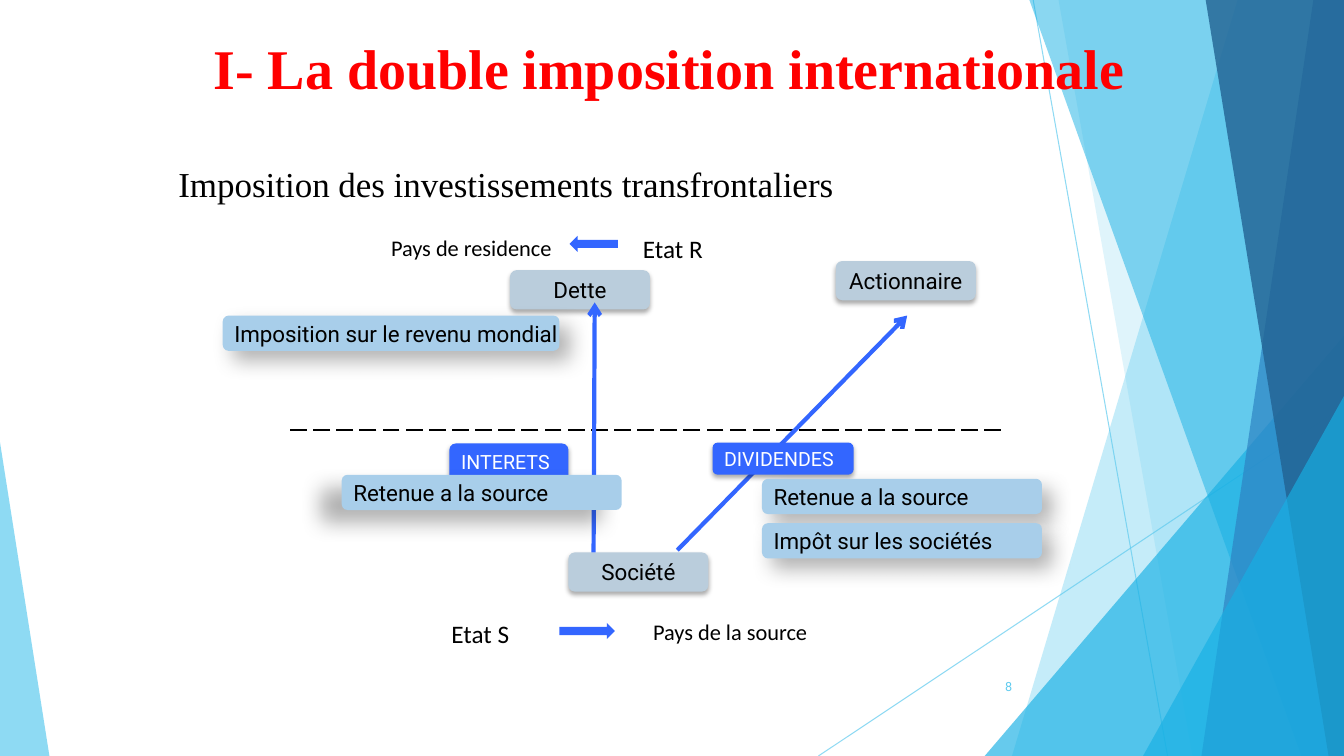
from dataclasses import dataclass
from typing import Any, Optional

from lxml import etree
from pptx import Presentation
from pptx.dml.color import RGBColor
from pptx.enum.dml import MSO_LINE
from pptx.enum.shapes import MSO_CONNECTOR, MSO_SHAPE
from pptx.enum.text import MSO_ANCHOR, MSO_AUTO_SIZE, PP_ALIGN
from pptx.oxml.ns import qn
from pptx.util import Pt

LEFT, MID, RIGHT, JUST = PP_ALIGN.LEFT, PP_ALIGN.CENTER, PP_ALIGN.RIGHT, PP_ALIGN.JUSTIFY
TOP, CORE = MSO_ANCHOR.TOP, MSO_ANCHOR.MIDDLE
ROUND, WEDGE = MSO_SHAPE.ROUNDED_RECTANGLE, MSO_SHAPE.RIGHT_TRIANGLE
PEAK = MSO_SHAPE.ISOSCELES_TRIANGLE
LARROW, RARROW = MSO_SHAPE.LEFT_ARROW, MSO_SHAPE.RIGHT_ARROW
STRAIGHT, DASH, FIXED = MSO_CONNECTOR.STRAIGHT, MSO_LINE.LONG_DASH, MSO_AUTO_SIZE.NONE
WIDE, HIGH = 960, 540


@dataclass(frozen=True)
class Theme:
    red: str = "FF0000"
    black: str = "000000"
    white: str = "FFFFFF"
    blue: str = "3366FF"
    grey: str = "BACDDC"
    pale: str = "A8CEEA"
    sky: str = "5FCBEF"
    cyan: str = "17B0E4"
    steel: str = "2E83C3"
    navy: str = "226292"
    serif: str = "Times New Roman"
    sans: str = "Roboto"
    plain: str = "Calibri"
    head: float = 40
    lead: float = 25
    state: float = 18
    note: float = 16
    tag: float = 14
    page: float = 9


T = Theme()


@dataclass(frozen=True)
class Type:
    font: str
    size: float
    color: str
    align: Any = LEFT
    anchor: Any = TOP
    wrap: bool = False
    bold: bool = False
    inset: float = 3.6


@dataclass(frozen=True)
class Shade:
    alpha: int
    blur: float
    dist: float
    angle: int


@dataclass(frozen=True)
class Slab:
    top: float
    foot: float
    color: str
    alpha: int


@dataclass(frozen=True)
class Spike:
    box: tuple
    apex: float
    color: str
    alpha: int


@dataclass(frozen=True)
class Line:
    start: tuple
    end: tuple
    color: str
    width: float
    dash: Any = None
    arrow: bool = False
    alpha: int = 100


@dataclass(frozen=True)
class Label:
    text: str
    box: tuple
    kind: Type
    fill: Optional[str] = None
    shade: Optional[Shade] = None


NODE = Type(T.sans, T.note, T.black, MID, inset=2.9)
NOTE = Type(T.sans, T.note, T.black, anchor=CORE)
TAG = Type(T.sans, T.tag, T.white, anchor=CORE)
STATE = Type(T.plain, T.state, T.black)
LAND = Type(T.plain, T.note, T.black)
NEAR, FAR, BACK = Shade(32, 3.5, 2.2, 90), Shade(30, 15, 10, 45), Shade(30, 15, 18, 149)

RAYS = [Line((738, 0), (834, HIGH), T.sky, 0.75, alpha=70),
        Line((WIDE, 290), (584.6, HIGH), T.sky, 0.75, alpha=70)]
FACETS = [Slab(884.2, 722.9, T.sky, 36), Slab(756, 851.8, T.sky, 20),
          Spike((703.4, 239.8, 256.6, 300.2), 1, T.cyan, 66),
          Slab(735.1, 929.5, T.cyan, 50), Slab(938.2, 858.2, T.steel, 70),
          Slab(861.1, 949, T.navy, 80),
          Spike((816.5, 283, 143.5, 257), 1, T.cyan, 66),
          Spike((0, 316, 35.3, 224), 0, T.sky, 70)]
NODES = [Label(text, (x, y, 100, 28), NODE, T.grey, NEAR) for text, x, y in (
    ("Actionnaire", 597, 186.5), ("Société", 406, 394.6), ("Dette", 364.3, 193))]
FLOWS = [Line((483.8, 393), (648, 225.4), T.blue, 3, arrow=True),
         Line((424, 394.6), (424.8, 216), T.blue, 3, arrow=True)]
TAGS = [Label("DIVIDENDES", (509, 316.1, 100.8, 23), TAG, T.blue, NEAR),
        Label("INTERETS", (321, 316.8, 85, 26.6), TAG, T.blue, NEAR)]
NOTES = [Label(text, (x, y, wide, 25.2), NOTE, T.pale, shade) for text, x, y, wide, shade in (
    ("Imposition sur le revenu mondial", 159.1, 225.4, 240.5, FAR),
    ("Retenue a la source", 544.3, 342, 200, FAR),
    ("Impôt sur les sociétés", 544.3, 373.7, 200, FAR),
    ("Retenue a la source", 244.1, 339.1, 200, BACK))]
TEXTS = [Label("Etat S", (315.4, 437.8, 63.4, 28.8), STATE),
         Label("Pays de la source", (459.4, 437.8, 126, 26.6), LAND),
         Label("Etat R", (452.2, 163.4, 57.6, 28.8), STATE),
         Label("Pays de residence", (272.2, 163.4, 130.3, 26.6), LAND),
         Label("8", (676.1, 475.9, 54, 28.8),
               Type(T.sans, T.page, T.sky, RIGHT, CORE, True))]
POINTERS = [(RARROW, (399.6, 445, 39.6, 11.5)), (LARROW, (406.8, 168.5, 34.6, 11.5))]


def apply(item: Any, vals: dict) -> None:
    for name, val in vals.items():
        setattr(item, name, val)


def lens(vals: tuple) -> list:
    return [Pt(val) for val in vals]


def fade(item: Any, alpha: int) -> None:
    for tint in item._element.spPr.iter(qn("a:srgbClr")):
        etree.SubElement(tint, qn("a:alpha"), val=str(alpha * 1000))


def paint(shape: Any, color: str) -> None:
    shape.fill.solid()
    shape.fill.fore_color.rgb = RGBColor.from_string(color)
    shape.line.fill.background()
    shape.shadow.inherit = False


def cast(shape: Any, shade: Shade) -> None:
    node = shape._element.spPr.find(qn("a:effectLst"))
    drop = etree.SubElement(node, qn("a:outerShdw"), blurRad=str(Pt(shade.blur)),
                            dist=str(Pt(shade.dist)), dir=str(shade.angle * 60000),
                            algn="ctr", rotWithShape="0")
    tint = etree.SubElement(drop, qn("a:srgbClr"), val=T.black)
    etree.SubElement(tint, qn("a:alpha"), val=str(shade.alpha * 1000))


def write(shape: Any, text: str, kind: Type) -> None:
    frame = shape.text_frame
    frame.text = text
    apply(frame, {"word_wrap": kind.wrap, "auto_size": FIXED, "vertical_anchor": kind.anchor,
                  "margin_left": Pt(7.2), "margin_right": Pt(7.2),
                  "margin_top": Pt(kind.inset), "margin_bottom": Pt(kind.inset)})
    para = frame.paragraphs[0]
    apply(para, {"alignment": kind.align, "space_before": Pt(0)})
    font = para.runs[0].font
    apply(font, {"name": kind.font, "size": Pt(kind.size), "bold": kind.bold})
    font.color.rgb = RGBColor.from_string(kind.color)


def draw_line(shapes: Any, line: Line) -> None:
    item = shapes.add_connector(STRAIGHT, *lens(line.start + line.end))
    apply(item.line, {"width": Pt(line.width), "dash_style": line.dash})
    item.line.color.rgb = RGBColor.from_string(line.color)
    if line.alpha < 100:
        fade(item, line.alpha)
    if line.arrow:
        etree.SubElement(item.line._get_or_add_ln(), qn("a:tailEnd"), type="arrow")
    etree.SubElement(item._element.spPr, qn("a:effectLst"))


def draw_facet(shapes: Any, facet: Any) -> None:
    if isinstance(facet, Slab):
        pen = shapes.build_freeform(Pt(facet.top), Pt(-0.6))
        ends = ((WIDE, -0.6), (WIDE, HIGH), (facet.foot, HIGH))
        pen.add_line_segments([lens(end) for end in ends], close=True)
        shape = pen.convert_to_shape()
    else:
        shape = shapes.add_shape(PEAK, *lens(facet.box))
        shape.adjustments[0] = facet.apex
    paint(shape, facet.color)
    fade(shape, facet.alpha)


def draw_label(shapes: Any, label: Label) -> None:
    if label.fill:
        shape = shapes.add_shape(ROUND, *lens(label.box))
        paint(shape, label.fill)
        cast(shape, label.shade)
    else:
        shape = shapes.add_textbox(*lens(label.box))
    write(shape, label.text, label.kind)


def fill_holder(shapes: Any, shape: Any, label: Label) -> None:
    apply(shape, dict(zip(("left", "top", "width", "height"), lens(label.box))))
    write(shape, label.text, label.kind)
    shapes._spTree.append(shape._element)


def main() -> None:
    deck = Presentation()
    apply(deck, {"slide_width": Pt(WIDE), "slide_height": Pt(HIGH)})
    slide = deck.slides.add_slide(deck.slide_layouts[1])
    shapes = slide.shapes
    body = slide.placeholders[1]
    for ray in RAYS:
        draw_line(shapes, ray)
    for facet in FACETS:
        draw_facet(shapes, facet)
    fill_holder(shapes, shapes.title, Label(
        "I- La double imposition internationale", (145.4, 20.2, 689.8, 55.4),
        Type(T.serif, T.head, T.red, JUST, bold=True)))
    fill_holder(shapes, body, Label(
        "Imposition des investissements transfrontaliers", (120.2, 112.3, 680.4, 340.6),
        Type(T.serif, T.lead, T.black, JUST, wrap=True)))
    props = body.text_frame.paragraphs[0]._p.get_or_add_pPr()
    for name in ("marL", "indent"):
        props.set(name, "0")
    etree.SubElement(props, qn("a:buNone"))
    draw_line(shapes, Line((715, 307.4), (203.8, 307.4), T.black, 1.5, DASH))
    for node in NODES:
        draw_label(shapes, node)
    for flow in FLOWS:
        draw_line(shapes, flow)
    for label in TAGS + NOTES + TEXTS:
        draw_label(shapes, label)
    for form, box in POINTERS:
        paint(shapes.add_shape(form, *lens(box)), T.blue)
    deck.save("out.pptx")


if __name__ == "__main__":
    main()
